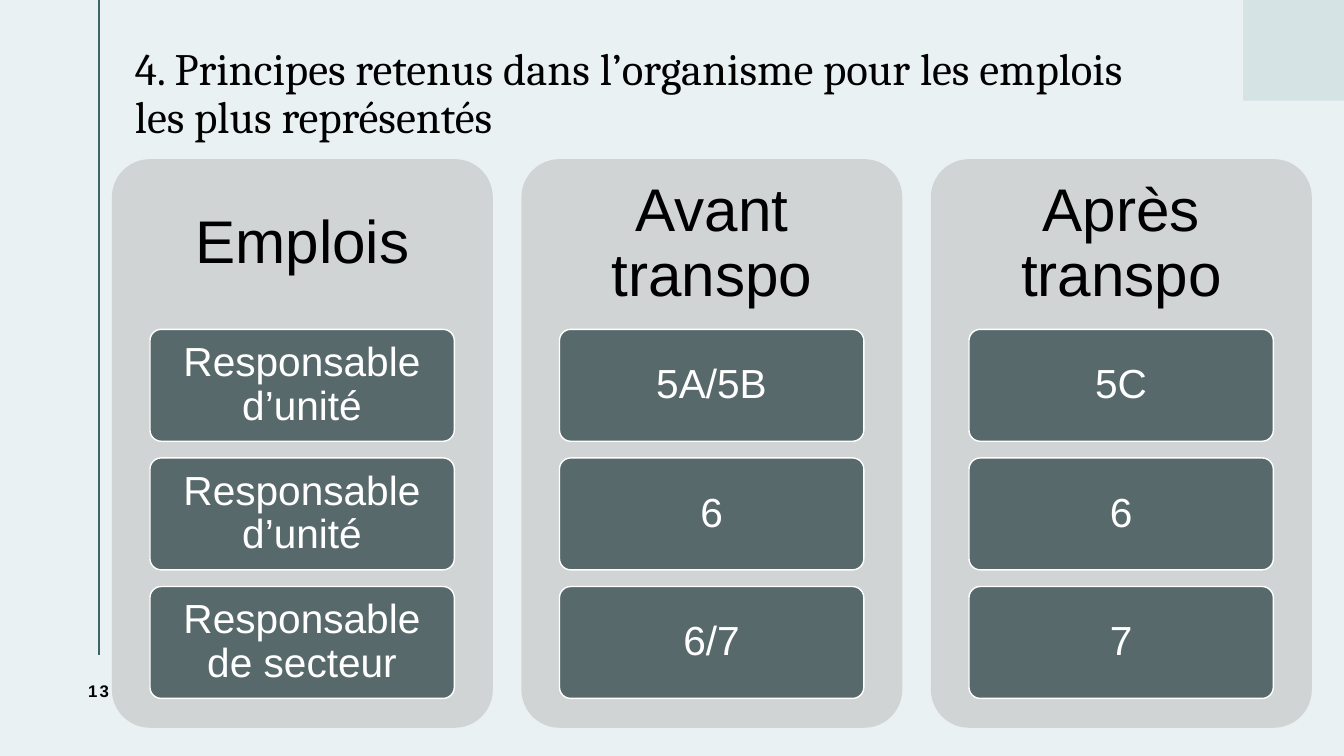
"""Build the slide comparing job levels before and after the transposition."""
from lxml import etree
from pptx import Presentation
from pptx.dml.color import RGBColor
from pptx.enum.shapes import MSO_CONNECTOR, MSO_SHAPE
from pptx.enum.text import MSO_ANCHOR, PP_ALIGN
from pptx.oxml.ns import qn
from pptx.util import Cm, Pt

STRAIGHT = MSO_CONNECTOR.STRAIGHT
RECTANGLE = MSO_SHAPE.RECTANGLE
ROUNDED = MSO_SHAPE.ROUNDED_RECTANGLE
MIDDLE = MSO_ANCHOR.MIDDLE
LEFT, CENTER = PP_ALIGN.LEFT, PP_ALIGN.CENTER

BACKGROUND = RGBColor(0xEA, 0xF1, 0xF2)
RULE = RGBColor(0x40, 0x63, 0x6A)
CORNER = RGBColor(0xD5, 0xE3, 0xE5)
PANEL = RGBColor(0xD1, 0xD4, 0xD4)
BOX = RGBColor(0x58, 0x69, 0x6B)
BLACK = RGBColor(0, 0, 0)
WHITE = RGBColor(0xFF, 0xFF, 0xFF)

COLUMNS = [
    ("Emplois", ["Responsable d’unité", "Responsable d’unité", "Responsable de secteur"]),
    ("Avant transpo", ["5A/5B", "6", "6/7"]),
    ("Après transpo", ["5C", "6", "7"]),
]
PANEL_LEFT, PANEL_TOP, PANEL_WIDTH, PANEL_HEIGHT = 2.82, 4.01, 9.6, 14.33
COLUMN_STEP = 10.32
HEADER_HEIGHT = 4.29
BOX_INDENT, BOX_WIDTH, BOX_HEIGHT, ROW_STEP = 0.96, 7.67, 2.82, 3.24


def add_block(kind, left, top, width, height, fill):
    shape = slide.shapes.add_shape(kind, Cm(left), Cm(top), Cm(width), Cm(height))
    shape.shadow.inherit = False
    shape.fill.solid()
    shape.fill.fore_color.rgb = fill
    shape.line.fill.background()
    if kind == ROUNDED:
        shape.adjustments[0] = 0.1
    return shape


def write_text(shape, text, size, color, insets, font="Arial", align=CENTER, spacing=0.9):
    frame = shape.text_frame
    frame.word_wrap = True
    frame.vertical_anchor = MIDDLE
    frame.margin_left, frame.margin_top, frame.margin_right, frame.margin_bottom = map(Cm, insets)
    paragraph = frame.paragraphs[0]
    paragraph.alignment = align
    paragraph.line_spacing = spacing
    run = paragraph.add_run()
    run.text = text
    run.font.name = font
    run.font.size = Pt(size)
    run.font.color.rgb = color
    return run


presentation = Presentation()
presentation.slide_width = Cm(33.87)
presentation.slide_height = Cm(19.05)
slide = presentation.slides.add_slide(presentation.slide_layouts[6])
slide.background.fill.solid()
slide.background.fill.fore_color.rgb = BACKGROUND

rule = slide.shapes.add_connector(STRAIGHT, Cm(2.49), Cm(0), Cm(2.49), Cm(16.51))
rule.line.color.rgb = RULE
rule.line.width = Pt(1.5)
etree.SubElement(rule.line._get_or_add_ln().getparent(), qn("a:effectLst"))

add_block(RECTANGLE, 31.33, 0, 2.54, 2.54, CORNER)

title = slide.shapes.add_textbox(Cm(3.4), Cm(0.36), Cm(25.86), Cm(4.06))
write_text(title, "4. Principes retenus dans l’organisme pour les emplois les plus représentés",
           32, BLACK, (0, 0.13, 0.25, 0.13), font="Cambria", align=LEFT)

number = slide.shapes.add_textbox(Cm(1.14), Cm(16.51), Cm(2.69), Cm(1.8))
number_run = write_text(number, "13", 12, BLACK, (0.25, 0.13, 0.25, 0.13), spacing=1.0)
number_run.font.bold = True
number_run.font._element.set("spc", "150")

for column, (heading, levels) in enumerate(COLUMNS):
    left = PANEL_LEFT + column * COLUMN_STEP
    add_block(ROUNDED, left, PANEL_TOP, PANEL_WIDTH, PANEL_HEIGHT, PANEL)
    header = slide.shapes.add_textbox(Cm(left), Cm(PANEL_TOP), Cm(PANEL_WIDTH), Cm(HEADER_HEIGHT))
    write_text(header, heading, 43, BLACK, (0.46, 0.46, 0.46, 0.46))
    for row, level in enumerate(levels):
        top = PANEL_TOP + HEADER_HEIGHT + row * ROW_STEP
        box = add_block(ROUNDED, left + BOX_INDENT, top, BOX_WIDTH, BOX_HEIGHT, BOX)
        box.line.color.rgb = WHITE
        box.line.width = Pt(1)
        write_text(box, level, 29, WHITE, (0.2, 0.15, 0.2, 0.15))

presentation.save("out.pptx")
